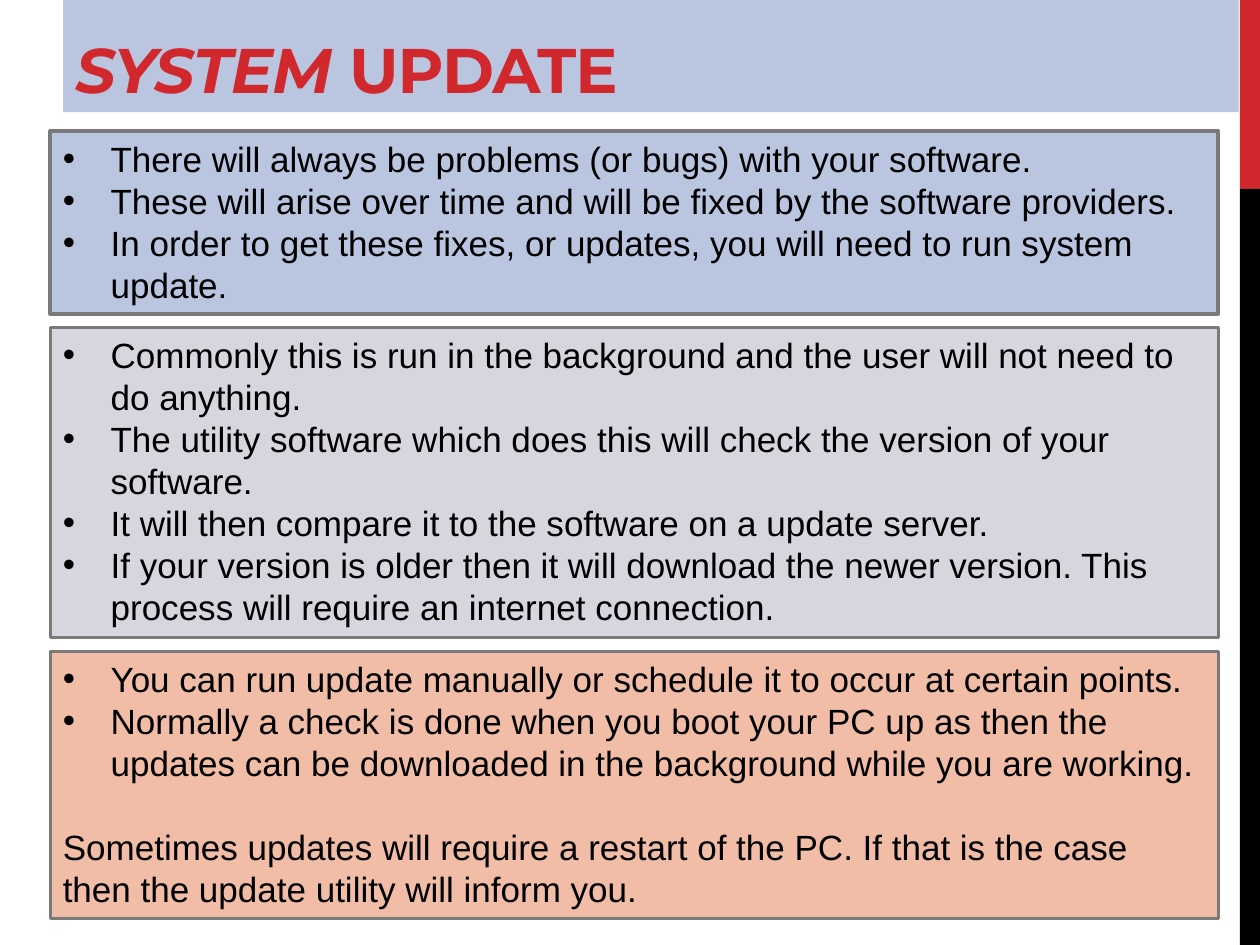
from pptx import Presentation
from pptx.dml.color import RGBColor
from pptx.enum.shapes import MSO_SHAPE as Shape
from pptx.enum.text import MSO_ANCHOR as Anchor, MSO_AUTO_SIZE as Fit, PP_ALIGN as Align
from pptx.oxml.ns import qn
from pptx.util import Inches, Pt
from lxml.etree import SubElement

TITLE = [("SYSTEM ", True), ("UPDATE", False)]
STRIPES = [("D1282E", 0, 1.5), ("000000", 1.5, 6)]  # colour, top, height
# fill, border width, top, height, bullets, closing text
PANELS = [
    ("BAC5DF", 2.25, 1.04, 1.45, [
        "There will always be problems (or bugs) with your software.",
        "These will arise over time and will be fixed by the software providers.",
        "In order to get these fixes, or updates, you will need to run system update.",
    ], None),
    ("D6D7DE", 1.5, 2.6, 2.46, [
        "Commonly this is run in the background and the user will not need to do anything.",
        "The utility software which does this will check the version of your software.",
        "It will then compare it to the software on a update server.",
        "If your version is older then it will download the newer version. "
        "This process will require an internet connection.",
    ], None),
    ("F1BDA7", 1.5, 5.17, 2.12, [
        "You can run update manually or schedule it to occur at certain points.",
        "Normally a check is done when you boot your PC up as then the updates "
        "can be downloaded in the background while you are working.",
    ], "Sometimes updates will require a restart of the PC. "
       "If that is the case then the update utility will inform you."),
]
HEAD = dict(name="Montserrat", size=Pt(36), bold=True)
BODY = dict(name="Arial", size=Pt(20))
LINE = Pt(24)
INDENT = Inches(0.38)


def paint(part, color):
    part.fill.solid()
    part.fill.fore_color.rgb = RGBColor.from_string(color)


def add_run(para, text, form, color):
    run = para.add_run()
    run.text = text
    for key, value in form.items():
        setattr(run.font, key, value)
    paint(run.font, color)
    return run


def add_box(slide, color, *place):
    box = slide.shapes.add_shape(Shape.RECTANGLE, *map(Inches, place))
    box.shadow.inherit = False
    paint(box, color)
    box.line.fill.background()
    return box


def add_bullet(para):
    props = para._p.get_or_add_pPr()
    props.set("marL", str(INDENT))
    props.set("indent", str(-INDENT))
    SubElement(props, qn("a:buFont")).set("typeface", "Arial")
    SubElement(props, qn("a:buChar")).set("char", "•")


def add_title(slide):
    title = slide.shapes.title
    title.left, title.top, title.width, title.height = map(Inches, (0.5, 0, 9.33, 0.89))
    paint(title, "BAC5DF")
    frame = title.text_frame
    frame.vertical_anchor, frame.auto_size = Anchor.BOTTOM, Fit.NONE
    para = frame.paragraphs[0]
    para.alignment = Align.LEFT
    for text, slant in TITLE:
        run = add_run(para, text, HEAD | dict(italic=slant), "D1282E")
        run.font._element.set("spc", "-60")


def add_panel(slide, color, width, top, height, items, close):
    box = add_box(slide, color, 0.4, top, 9.27, height)
    paint(box.line, "7A7A7A")
    box.line.width = Pt(width)
    frame = box.text_frame
    frame.word_wrap, frame.vertical_anchor = True, Anchor.TOP
    for i, text in enumerate(items + ([close] if close else [])):
        para = frame.add_paragraph() if i else frame.paragraphs[0]
        para.alignment, para.line_spacing = Align.LEFT, LINE
        if i < len(items):
            add_bullet(para)
        else:
            para.space_before = LINE
        add_run(para, text, BODY, "000000")


def main():
    deck = Presentation()
    deck.slide_width, deck.slide_height = Inches(10), Inches(7.5)
    slide = deck.slides.add_slide(deck.slide_layouts[5])
    for color, top, height in STRIPES:
        add_box(slide, color, 9.84, top, 0.16, height)
    add_title(slide)
    for panel in PANELS:
        add_panel(slide, *panel)
    deck.save("out.pptx")


if __name__ == "__main__":
    main()
